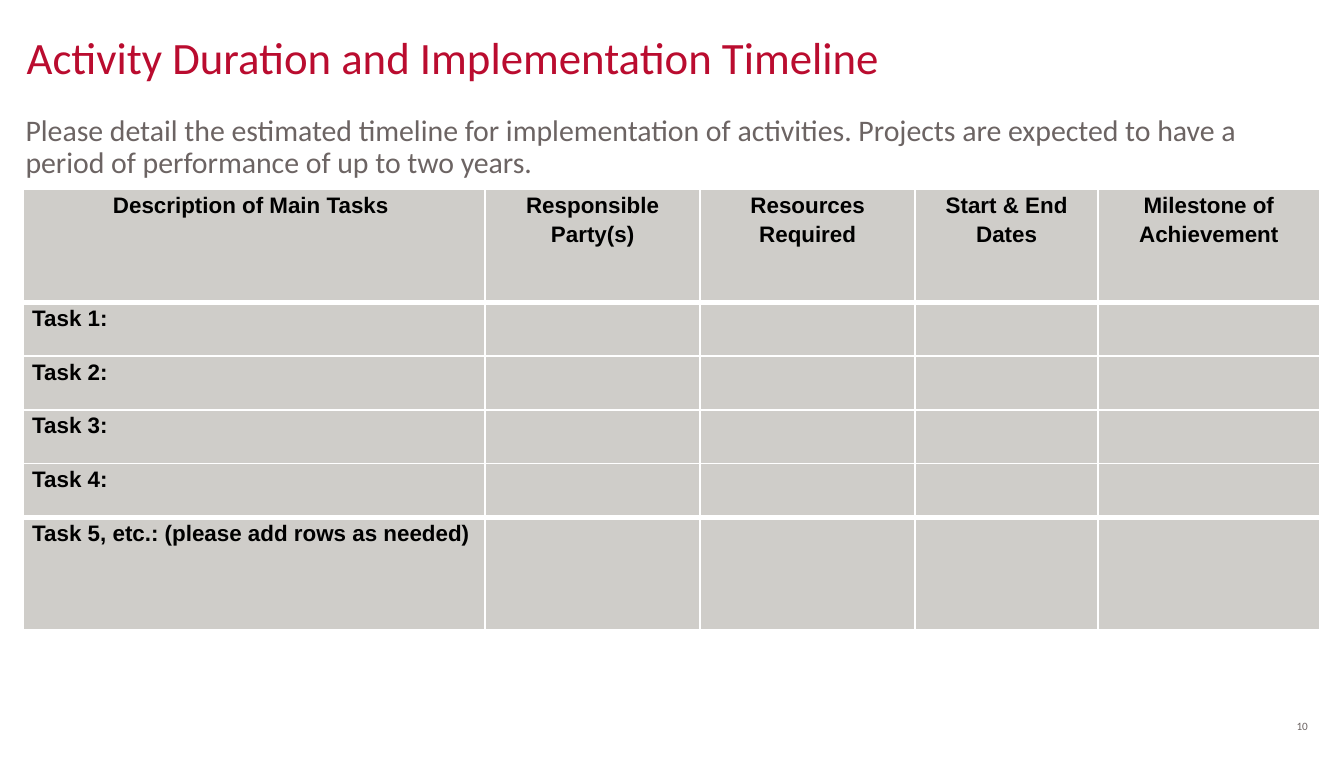
from lxml import etree
from pptx import Presentation
from pptx.dml.color import RGBColor
from pptx.enum.text import MSO_ANCHOR, PP_ALIGN
from pptx.oxml.ns import qn
from pptx.util import Inches, Pt

LEFT, CENTER, RIGHT = PP_ALIGN.LEFT, PP_ALIGN.CENTER, PP_ALIGN.RIGHT
TOP, MIDDLE, BOTTOM = MSO_ANCHOR.TOP, MSO_ANCHOR.MIDDLE, MSO_ANCHOR.BOTTOM

THEME = {
    "red": "BA0C2F", "gray": "6C6463", "black": "000000",
    "cell": "CFCDC9", "line": "FFFFFF",
    "font": "Calibri", "table_font": "Arial",
    "title": 24, "body": 16, "table": 12, "number": 6,
    "thin": 1, "thick": 3,
}

prs = Presentation()
prs.slide_width, prs.slide_height = Inches(10), Inches(5.67)
s = prs.slides.add_slide(prs.slide_layouts[6])

# Grid of 100 columns by 56.7 rows
COL, ROW = prs.slide_width / 100, prs.slide_height / 56.7


def write(tf, text, font, size, color, align=LEFT, spacing=1.0, bold=False):
    tf.text = text
    p = tf.paragraphs[0]
    p.alignment, p.line_spacing = align, spacing
    for r in p.runs:
        r.font.name, r.font.size, r.font.bold = font, Pt(size), bold
        r.font.color.rgb = RGBColor.from_string(color)


def add_border(cell, side, width):
    ln = etree.SubElement(cell._tc.get_or_add_tcPr(), qn(f"a:ln{side}"), w=str(Pt(width)))
    fill = etree.SubElement(ln, qn("a:solidFill"))
    etree.SubElement(fill, qn("a:srgbClr"), val=THEME["line"])


# Title, introduction and slide number: place, text, size, colour, layout
INTRO = ("Please detail the estimated timeline for implementation of activities. "
         "Projects are expected to have a period of performance of up to two years.")
texts = [
    (1, 1.7, 85, 5, "Activity Duration and Implementation Timeline",
     "title", "red", LEFT, BOTTOM, 1.0, 1),
    (-0.5, 8.1, 93.8, 6, INTRO, "body", "gray", LEFT, TOP, 0.9, 2.4),
    (75, 53, 23.3, 2, "10", "number", "gray", RIGHT, MIDDLE, 1.0, 1),
]
for x, y, w, h, text, size, color, align, anchor, spacing, inset in texts:
    sp = s.shapes.add_textbox(int(x * COL), int(y * ROW), int(w * COL), int(h * ROW))
    tf = sp.text_frame
    tf.word_wrap, tf.vertical_anchor = True, anchor
    tf.margin_left = int(inset * COL)
    write(tf, text, THEME["font"], THEME[size], THEME[color], align, spacing)

# Timeline table
headers = ["Description of Main Tasks ", "Responsible Party(s)", "Resources Required",
           "Start & End Dates", "Milestone of Achievement"]
tasks = [f"Task {n}:" for n in range(1, 5)] + ["Task 5, etc.: (please add rows as needed)"]
grid = [headers] + [[task] + [""] * (len(headers) - 1) for task in tasks]
widths = [34.4, 16, 16, 13.6, 16.5]
heights = [8.4, 4, 4, 4, 4, 8.4]
last = len(grid) - 1

table = s.shapes.add_table(len(grid), len(headers), int(1.7 * COL), int(14.1 * ROW),
                           int(sum(widths) * COL), int(sum(heights) * ROW)).table
table.horz_banding = False
for column, width in zip(table.columns, widths):
    column.width = int(width * COL)

for i, (row, height) in enumerate(zip(table.rows, heights)):
    row.height = int(height * ROW)
    # Thick rules below the header and above the last row
    above = THEME["thick" if i in (1, last) else "thin"]
    below = THEME["thick" if i in (0, last - 1) else "thin"]
    for cell, text in zip(row.cells, grid[i]):
        cell.margin_left = cell.margin_right = int(0.7 * COL)
        cell.margin_top = cell.margin_bottom = 0
        for side, width in zip("LRTB", (THEME["thin"], THEME["thin"], above, below)):
            add_border(cell, side, width)
        cell.fill.solid()
        cell.fill.fore_color.rgb = RGBColor.from_string(THEME["cell"])
        if text:
            write(cell.text_frame, text, THEME["table_font"], THEME["table"],
                  THEME["black"], CENTER if i == 0 else LEFT, 1.15, True)

prs.save("out.pptx")
